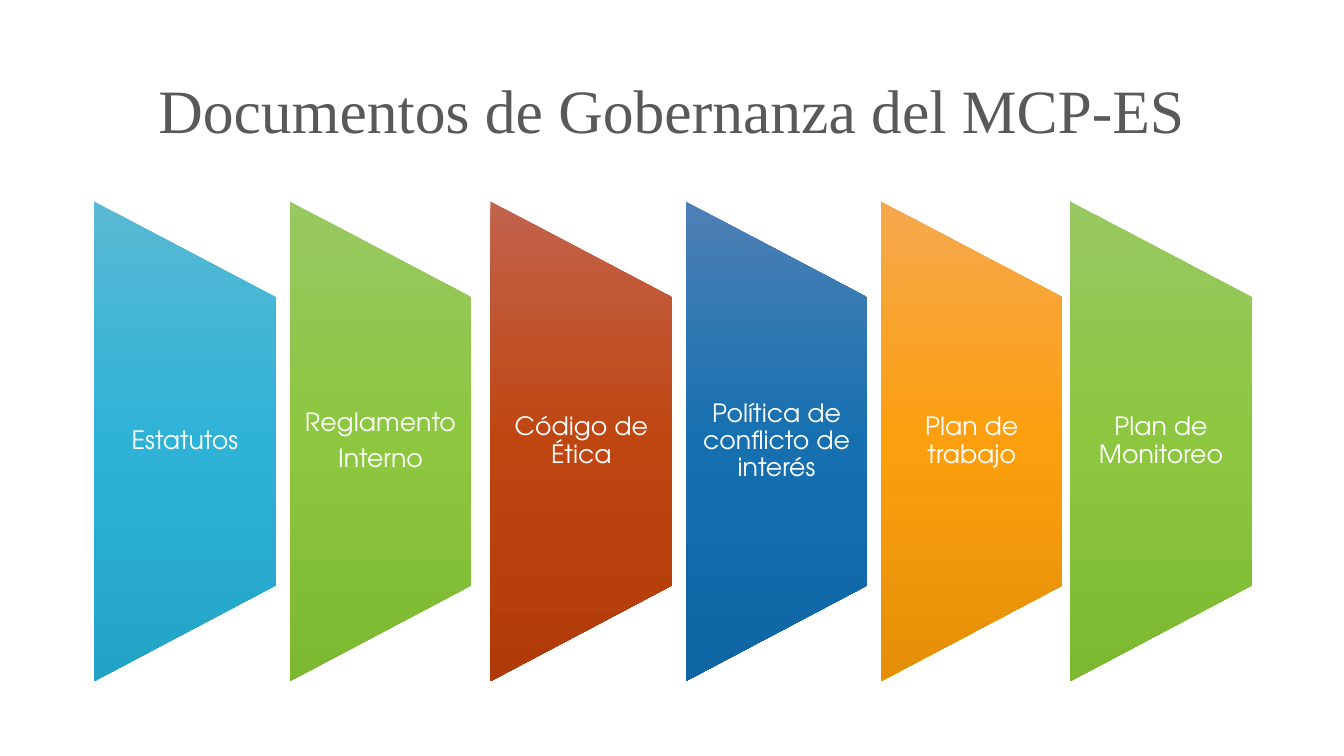
from pptx import Presentation
from pptx import util as u
from pptx.dml.color import RGBColor
from pptx.enum import shapes, text
from pptx.oxml import parse_xml
from pptx.oxml.ns import nsdecls


def write(box, lines, size, font, color, space_after=0):
    """Fill a text box with centred paragraphs, one per line."""
    frame = box.text_frame
    frame.word_wrap = True
    frame.vertical_anchor = text.MSO_ANCHOR.MIDDLE
    frame.text = "\n".join(lines)
    for paragraph in frame.paragraphs:
        paragraph.alignment = text.PP_ALIGN.CENTER
        paragraph.line_spacing = 0.9
        paragraph.space_after = u.Pt(space_after)
        paragraph.font.size = u.Pt(size)
        paragraph.font.name = font
        paragraph.font.color.rgb = RGBColor.from_string(color)


def vertical_gradient(shape, colors):
    """Shade a shape from top to bottom of the slide, whatever its rotation."""
    stops = "".join(
        f'<a:gs pos="{position}"><a:srgbClr val="{color}"/></a:gs>'
        for position, color in zip((0, 50000, 100000), colors))
    gradient = parse_xml(
        f'<a:gradFill {nsdecls("a")} rotWithShape="0"><a:gsLst>{stops}</a:gsLst>'
        '<a:lin ang="5400000" scaled="0"/></a:gradFill>')
    shape._element.spPr.find("{*}prstGeom").addnext(gradient)


prs = Presentation()
prs.slide_width, prs.slide_height = u.Cm(33.87), u.Cm(19.05)
slide = prs.slides.add_slide(prs.slide_layouts[6])

title = slide.shapes.add_textbox(u.Cm(2.33), u.Cm(1.01), u.Cm(29.21), u.Cm(3.68))
write(title, ["Documentos de Gobernanza del MCP-ES"], 44, "Times New Roman", "595959")

BLUE = ("59B8D4", "2EB3D6", "21A4C6")
GREEN = ("98C862", "8CC73F", "7DB831")
RED = ("C2634D", "BF4611", "B13B08")
NAVY = ("4E80B5", "1670B0", "0D65A3")
ORANGE = ("F5A84E", "FC9F0E", "E58F07")

documents = [
    (2.37, BLUE, ["Estatutos"]),
    (7.3, GREEN, ["Reglamento", "Interno"]),
    (12.36, RED, ["Código de Ética"]),
    (17.28, NAVY, ["Política de conflicto de interés"]),
    (22.2, ORANGE, ["Plan de trabajo"]),
    (26.97, GREEN, ["Plan de Monitoreo"]),
]
panel_width, panel_height, label_height = 4.58, 12.09, 7.26
middle = 11.12

for left, colors, lines in documents:
    # The panel lies on its side, so its length becomes the height once turned.
    panel = slide.shapes.add_shape(
        shapes.MSO_SHAPE.FLOWCHART_MANUAL_OPERATION,
        u.Cm(left + (panel_width - panel_height) / 2), u.Cm(middle - panel_width / 2),
        u.Cm(panel_height), u.Cm(panel_width))
    panel.rotation = 270
    panel.shadow.inherit = False
    panel.line.fill.background()
    vertical_gradient(panel, colors)

    label = slide.shapes.add_textbox(
        u.Cm(left), u.Cm(middle - label_height / 2), u.Cm(panel_width), u.Cm(label_height))
    margins = {"margin_left": 0.3, "margin_right": 0.3, "margin_top": 0, "margin_bottom": 0}
    for side, margin in margins.items():
        setattr(label.text_frame, side, u.Cm(margin))
    write(label, lines, 18, "TeX Gyre Adventor", "FFFFFF", space_after=6.3)

prs.save("out.pptx")
